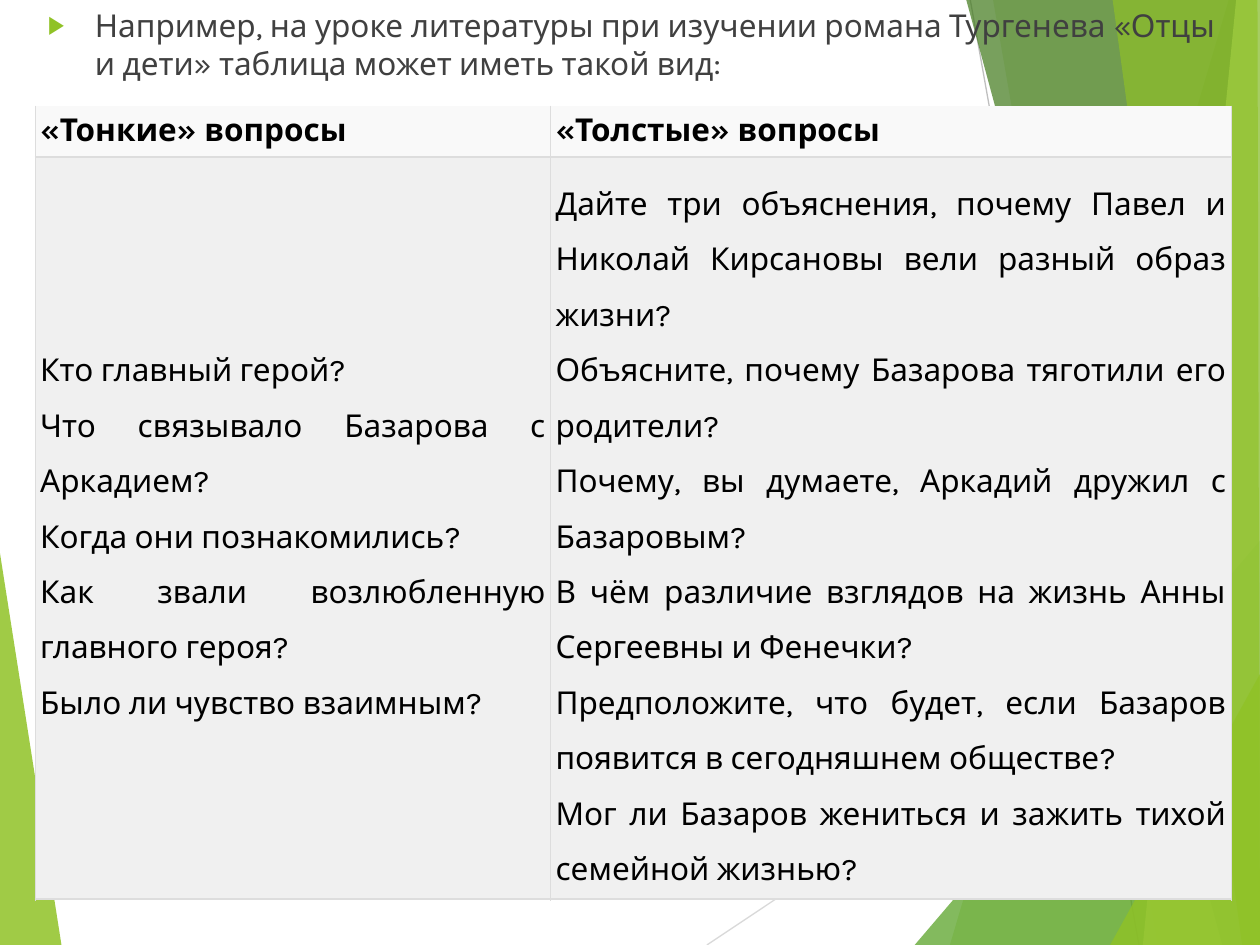
from lxml import etree
from pptx import Presentation
from pptx.dml.color import RGBColor
from pptx.enum.shapes import MSO_CONNECTOR
from pptx.enum.text import MSO_ANCHOR, MSO_AUTO_SIZE, PP_ALIGN
from pptx.oxml.ns import qn
from pptx.util import Cm, Pt

STRAIGHT = MSO_CONNECTOR.STRAIGHT
MIDDLE = MSO_ANCHOR.MIDDLE
TOP = MSO_ANCHOR.TOP
NO_FIT = MSO_AUTO_SIZE.NONE
LEFT = PP_ALIGN.LEFT
JUSTIFY = PP_ALIGN.JUSTIFY

FONT = "Karla"
LIME = RGBColor(0x90, 0xC2, 0x26)
LEAF = RGBColor(0x54, 0xA0, 0x21)
MOSS = RGBColor(0x3F, 0x78, 0x19)
PALE = RGBColor(0xC0, 0xE4, 0x74)
SILVER = RGBColor(0xD9, 0xD9, 0xD9)
GREY = RGBColor(0xBF, 0xBF, 0xBF)
DARK = RGBColor(0x40, 0x40, 0x40)
BLACK = RGBColor(0, 0, 0)
EDGE = RGBColor(0xDD, 0xDD, 0xDD)
HEAD = RGBColor(0xF9, 0xF9, 0xF9)
CELL = RGBColor(0xF0, 0xF0, 0xF0)

WIDTH, HEIGHT = 25.4, 19.05

LEFT_FACET = (LIME, 85, [(0, 11.15), (1.24, HEIGHT), (0, HEIGHT)])
RAYS = [
    (SILVER, (14.25, HEIGHT), (WIDTH, 11.61)),
    (GREY, (19.56, 0), (22.96, HEIGHT)),
]
RIGHT_FACETS = [
    (LIME, 30, [(24.77, 0), (19.15, HEIGHT), (WIDTH, HEIGHT), (WIDTH, 0)]),
    (LIME, 20, [(20.02, 0), (23.34, HEIGHT), (WIDTH, HEIGHT), (WIDTH, 0)]),
    (LEAF, 72, [(18.44, HEIGHT), (WIDTH, 10.9), (WIDTH, HEIGHT)]),
    (MOSS, 70, [(19.48, 0), (24.64, HEIGHT), (WIDTH, HEIGHT), (WIDTH, 0)]),
    (PALE, 70, [(24.92, 0), (23.04, HEIGHT), (WIDTH, HEIGHT), (WIDTH, 0)]),
    (LIME, 65, [(22.43, 0), (25.04, HEIGHT), (WIDTH, HEIGHT), (25.35, 0)]),
    (LIME, 80, [(22.38, HEIGHT), (WIDTH, 13.59), (WIDTH, HEIGHT)]),
]

INTRO = ("Например, на уроке литературы при изучении романа Тургенева "
         "«Отцы и дети» таблица может иметь такой вид:")
COLUMNS = [
    (10.39, "«Тонкие» вопросы", [
        "Кто главный герой?",
        "Что связывало Базарова с Аркадием?",
        "Когда они познакомились?",
        "Как звали возлюбленную главного героя?",
        "Было ли чувство взаимным?",
    ]),
    (13.72, "«Толстые» вопросы", [
        "Дайте три объяснения, почему Павел и Николай Кирсановы вели разный образ жизни?",
        "Объясните, почему Базарова тяготили его родители?",
        "Почему, вы думаете, Аркадий дружил с Базаровым?",
        "В чём различие взглядов на жизнь Анны Сергеевны и Фенечки?",
        "Предположите, что будет, если Базаров появится в сегодняшнем обществе?",
        "Мог ли Базаров жениться и зажить тихой семейной жизнью?",
    ]),
]
ROWS = [1.04, 14.96]


def add_node(parent, tag, **attrs):
    return etree.SubElement(parent, qn(tag), attrs)


def add_facet(slide, color, alpha, points):
    spots = [(Cm(x), Cm(y)) for x, y in points]
    pen = slide.shapes.build_freeform(*spots[0])
    pen.add_line_segments(spots[1:])
    shape = pen.convert_to_shape()
    shape.shadow.inherit = False
    shape.line.fill.background()
    shape.fill.solid()
    shape.fill.fore_color.rgb = color
    tint = shape.fill._xPr.find(".//" + qn("a:srgbClr"))
    add_node(tint, "a:alpha", val=str(alpha * 1000))


def add_ray(slide, color, start, end):
    ray = slide.shapes.add_connector(
        STRAIGHT, *[Cm(value) for value in start + end])
    ray.line.color.rgb = color
    ray.line.width = Pt(0.75)
    add_node(ray._element.spPr, "a:effectLst")


def add_text(para, text, color, bold=False):
    run = para.add_run()
    run.text = text
    run.font.name = FONT
    run.font.size = Pt(18)
    run.font.bold = bold
    run.font.color.rgb = color


def add_bullet(para):
    props = para._p.get_or_add_pPr()
    props.set("marL", str(Cm(0.95)))
    props.set("indent", str(Cm(-0.95)))
    add_node(add_node(props, "a:buClr"), "a:srgbClr", val=str(LIME))
    add_node(props, "a:buSzPct", val="80000")
    add_node(props, "a:buFont", typeface="Arial")
    add_node(props, "a:buChar", char="▶")


def fill_body(slide):
    title, body = slide.shapes.title, slide.placeholders[1]
    title._element.getparent().remove(title._element)
    body._element.getparent().append(body._element)
    body.left, body.top = Cm(0.71), Cm(0)
    body.width, body.height = Cm(24.1), Cm(HEIGHT)
    frame = body.text_frame
    frame.auto_size = NO_FIT
    frame.vertical_anchor = TOP
    para = frame.paragraphs[0]
    para.alignment = LEFT
    para.space_before = Pt(10)
    add_bullet(para)
    add_text(para, INTRO, DARK)


def add_edge(cell, side, width):
    props = cell._tc.get_or_add_tcPr()
    edge = add_node(props, "a:ln" + side, w=str(Pt(width)))
    if width:
        fill = add_node(edge, "a:solidFill")
        add_node(fill, "a:srgbClr", val=str(EDGE))
    else:
        add_node(edge, "a:noFill")


def fill_cell(cell, lines, fill, top, bold, space):
    cell.margin_left = cell.margin_right = Cm(0.1)
    cell.margin_top = cell.margin_bottom = Cm(0.1)
    cell.vertical_anchor = MIDDLE
    for side, width in (("L", 0.75), ("R", 0.75), ("T", top), ("B", 1.5)):
        add_edge(cell, side, width)
    cell.fill.solid()
    cell.fill.fore_color.rgb = fill
    frame = cell.text_frame
    for index, line in enumerate(lines):
        para = frame.add_paragraph() if index else frame.paragraphs[0]
        para.alignment = JUSTIFY
        para.line_spacing = space
        add_text(para, line, BLACK, bold)


def add_grid(slide):
    width = sum(column[0] for column in COLUMNS)
    grid = slide.shapes.add_table(
        len(ROWS), len(COLUMNS), Cm(0.71), Cm(2.13),
        Cm(width), Cm(sum(ROWS))).table
    grid.first_row = False
    grid.horz_banding = False
    for row, height in zip(grid.rows, ROWS):
        row.height = Cm(height)
    for index, (width, head, lines) in enumerate(COLUMNS):
        grid.columns[index].width = Cm(width)
        fill_cell(grid.cell(0, index), [head], HEAD, 0, True, 1.0)
        fill_cell(grid.cell(1, index), lines, CELL, 1.5, False, 1.5)


def main():
    deck = Presentation()
    deck.slide_width, deck.slide_height = Cm(WIDTH), Cm(HEIGHT)
    slide = deck.slides.add_slide(deck.slide_layouts[1])
    add_facet(slide, *LEFT_FACET)
    for ray in RAYS:
        add_ray(slide, *ray)
    for facet in RIGHT_FACETS:
        add_facet(slide, *facet)
    fill_body(slide)
    add_grid(slide)
    deck.save("out.pptx")


if __name__ == "__main__":
    main()
